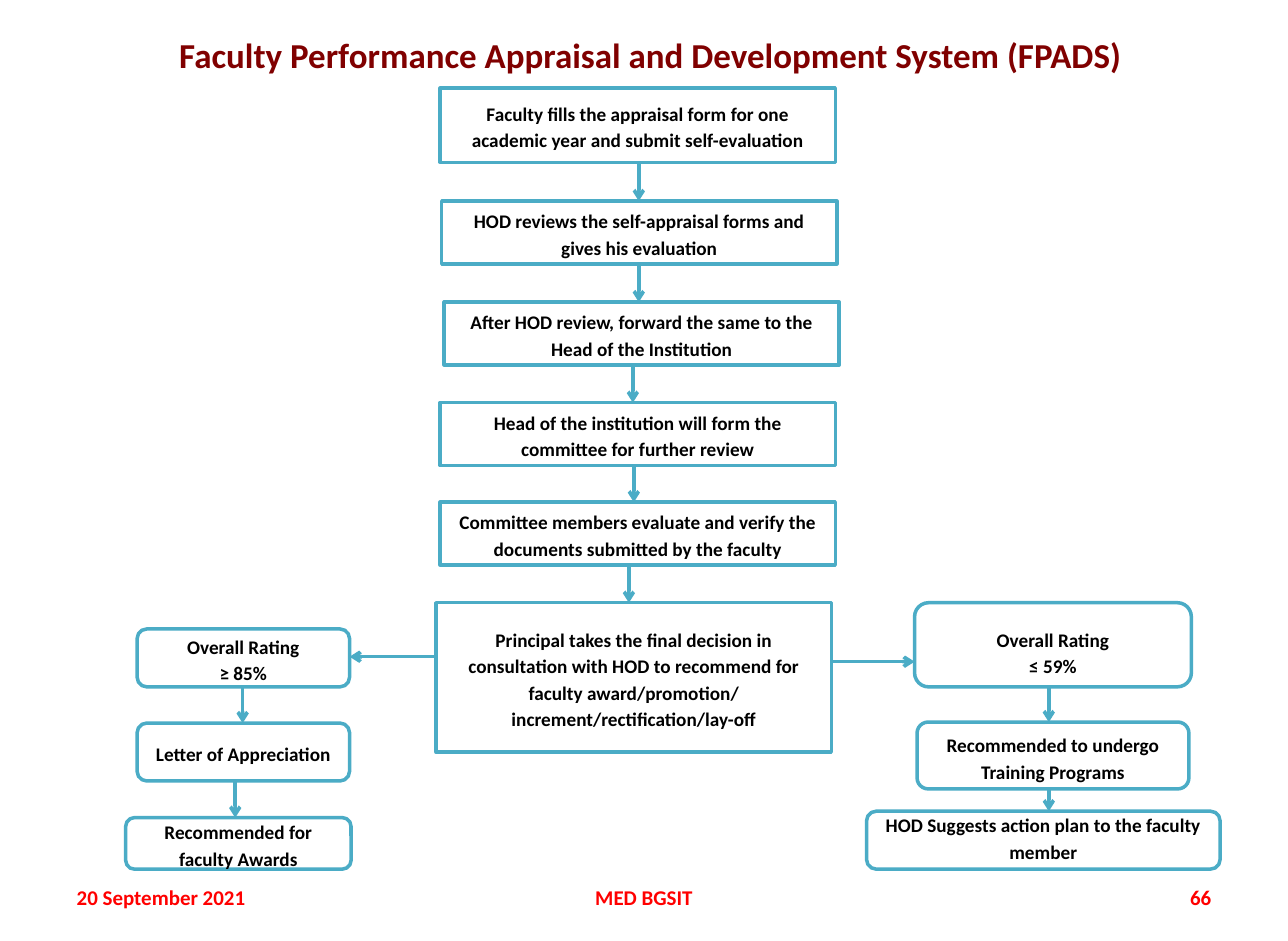
"""Build the faculty appraisal flowchart slide."""
from dataclasses import dataclass

from lxml.etree import SubElement
from pptx import Presentation
from pptx.dml.color import RGBColor
from pptx.enum.shapes import MSO_CONNECTOR, MSO_SHAPE
from pptx.enum.text import MSO_ANCHOR, PP_ALIGN
from pptx.oxml.ns import qn
from pptx.slide import Slide
from pptx.text.text import TextFrame
from pptx.util import Cm, Pt


@dataclass(frozen=True)
class Theme:
    """Colours, type sizes and line width of the slide."""
    font: str = "Calibri"
    title: RGBColor = RGBColor(0x80, 0x00, 0x00)
    footer: RGBColor = RGBColor(0xFF, 0x00, 0x00)
    body: RGBColor = RGBColor(0x00, 0x00, 0x00)
    fill: RGBColor = RGBColor(0xFF, 0xFF, 0xFF)
    line: RGBColor = RGBColor(0x4B, 0xAC, 0xC6)
    title_size: int = 20
    footer_size: int = 12
    body_size: int = 11
    line_width: int = 2
    line_spacing: float = 1.15


THEME = Theme()


@dataclass(frozen=True)
class Label:
    """Free-standing text, measured in centimetres."""
    text: str
    left: float
    top: float
    width: float
    height: float
    align: PP_ALIGN
    size: int = THEME.footer_size
    color: RGBColor = THEME.footer


@dataclass(frozen=True)
class Step:
    """A flowchart box, measured in centimetres."""
    text: str
    left: float
    top: float
    width: float
    height: float
    kind: MSO_SHAPE = MSO_SHAPE.FLOWCHART_ALTERNATE_PROCESS
    inset_top: float = 0.13
    inset_bottom: float = 0.13

    @property
    def right(self) -> float:
        """Return the right edge."""
        return self.left + self.width

    @property
    def bottom(self) -> float:
        """Return the lower edge."""
        return self.top + self.height


def main_step(text: str, left: float, top: float, height: float = 1.27) -> Step:
    """Return a rectangular box of the central column."""
    return Step(text, left, top, 7.98, height, MSO_SHAPE.RECTANGLE)


LABELS = [
    Label("Faculty Performance Appraisal and Development System (FPADS)",
          2.9, 0.41, 20.47, 1.4, PP_ALIGN.CENTER, THEME.title_size, THEME.title),
    Label("20 September 2021", 1.3, 17.6, 6.07, 1.02, PP_ALIGN.LEFT),
    Label("MED BGSIT", 8.89, 17.6, 8.23, 1.02, PP_ALIGN.CENTER),
    Label("66", 18.64, 17.6, 6.07, 1.02, PP_ALIGN.RIGHT),
]
MAIN_STEPS = [
    main_step("Faculty fills the appraisal form for one academic year and submit "
              "self-evaluation", 8.89, 1.78, 1.5),
    main_step("HOD reviews the self-appraisal forms and gives his evaluation", 8.92, 4.06),
    main_step("After HOD review, forward the same to the Head of the Institution", 8.97, 6.1),
    main_step("Head of the institution will form the committee for further review", 8.89, 8.13),
    main_step("Committee members evaluate and verify the documents submitted by the faculty",
              8.89, 10.14),
    main_step("Principal takes the final decision in consultation with HOD to recommend for\n"
              "faculty award/promotion/ increment/rectification/lay-off", 8.81, 12.17, 3.02),
]
AWARD_STEPS = [
    Step("Overall Rating\n≥ 85%", 2.77, 12.7, 4.29, 1.17),
    Step("Letter of Appreciation", 2.77, 14.6, 4.29, 1.17),
    Step("Recommended for faculty Awards", 2.54, 16.51, 4.55, 1.04),
]
TRAINING_STEPS = [
    Step("Overall Rating\n≤ 59%", 18.47, 12.17, 5.59, 1.7, inset_top=0.38),
    Step("Recommended to undergo Training Programs", 18.52, 14.58, 5.49, 1.35, inset_top=0.18),
    Step("HOD Suggests action plan to the faculty member", 17.5, 16.38, 7.14, 1.17,
         inset_bottom=0.28),
]
COLUMNS = [
    (MAIN_STEPS, [12.9, 12.9, 12.78, 12.8, 12.7]),
    (AWARD_STEPS, [4.9, 4.75]),
    (TRAINING_STEPS, [21.18, 21.18]),
]


def write_text(frame: TextFrame, text: str, align: PP_ALIGN, size: int,
               color: RGBColor, spacing: float = 1.0) -> None:
    """Fill a text frame with bold, vertically centred paragraphs."""
    frame.word_wrap = True
    frame.vertical_anchor = MSO_ANCHOR.MIDDLE
    frame.text = text
    for paragraph in frame.paragraphs:
        paragraph.alignment = align
        paragraph.line_spacing = spacing
        paragraph.font.name = THEME.font
        paragraph.font.size = Pt(size)
        paragraph.font.bold = True
        paragraph.font.color.rgb = color


def draw_label(slide: Slide, label: Label) -> None:
    """Draw a title or footer text."""
    shape = slide.shapes.add_textbox(
        Cm(label.left), Cm(label.top), Cm(label.width), Cm(label.height))
    write_text(shape.text_frame, label.text, label.align, label.size, label.color)


def draw_step(slide: Slide, step: Step) -> None:
    """Draw a flowchart box."""
    shape = slide.shapes.add_shape(
        step.kind, Cm(step.left), Cm(step.top), Cm(step.width), Cm(step.height))
    shape.shadow.inherit = False
    shape.fill.solid()
    shape.fill.fore_color.rgb = THEME.fill
    shape.line.color.rgb = THEME.line
    shape.line.width = Pt(THEME.line_width)
    shape.text_frame.margin_top = Cm(step.inset_top)
    shape.text_frame.margin_bottom = Cm(step.inset_bottom)
    write_text(shape.text_frame, step.text, PP_ALIGN.CENTER, THEME.body_size,
               THEME.body, THEME.line_spacing)


def draw_arrow(slide: Slide, start_x: float, start_y: float,
               end_x: float, end_y: float) -> None:
    """Draw a straight arrow between two points."""
    connector = slide.shapes.add_connector(
        MSO_CONNECTOR.STRAIGHT, Cm(start_x), Cm(start_y), Cm(end_x), Cm(end_y))
    connector.line.color.rgb = THEME.line
    connector.line.width = Pt(THEME.line_width)
    SubElement(connector.line._get_or_add_ln(), qn("a:tailEnd"), type="arrow")
    SubElement(connector._element.spPr, qn("a:effectLst"))


def main() -> None:
    """Build and save the presentation."""
    presentation = Presentation()
    presentation.slide_width = Cm(26.01)
    presentation.slide_height = Cm(19)
    slide = presentation.slides.add_slide(presentation.slide_layouts[6])
    for label in LABELS:
        draw_label(slide, label)
    for steps, arrow_positions in COLUMNS:
        for step in steps:
            draw_step(slide, step)
        for upper, lower, x in zip(steps, steps[1:], arrow_positions):
            draw_arrow(slide, x, upper.bottom, x, lower.top)
    decision = MAIN_STEPS[-1]
    draw_arrow(slide, decision.left, 13.26, AWARD_STEPS[0].right, 13.26)
    draw_arrow(slide, decision.right, 13.36, TRAINING_STEPS[0].left, 13.36)
    presentation.save("out.pptx")


if __name__ == "__main__":
    main()
